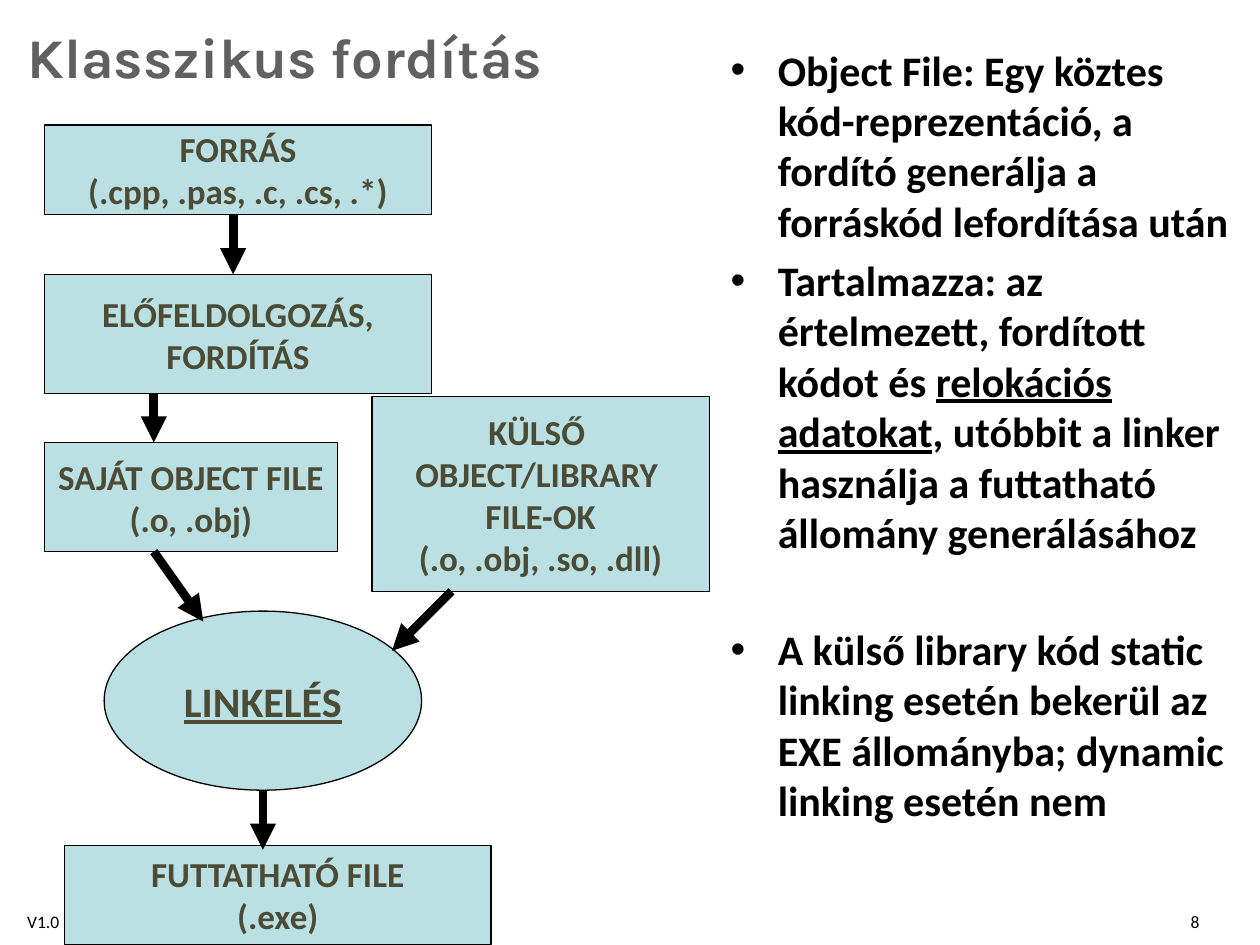
from pptx import Presentation
from pptx.dml.color import RGBColor
from pptx.enum.shapes import MSO_CONNECTOR, MSO_SHAPE
from pptx.enum.text import MSO_ANCHOR, PP_ALIGN
from pptx.oxml.ns import qn
from pptx.util import Cm, Pt
from lxml import etree

RECT, OVAL = MSO_SHAPE.RECTANGLE, MSO_SHAPE.OVAL
LINE = MSO_CONNECTOR.STRAIGHT
LEFT, MID, RIGHT = PP_ALIGN.LEFT, PP_ALIGN.CENTER, PP_ALIGN.RIGHT
TOP, CENTER = MSO_ANCHOR.TOP, MSO_ANCHOR.MIDDLE
COLORS = {"title": "606060", "text": "000000", "label": "4B4B36",
          "fill": "BBE0E3", "line": "000000"}


class Deck:
    """Holds the style and the current slide."""

    def __init__(self):
        self.show = Presentation()
        self.show.slide_width, self.show.slide_height = Cm(25.4), Cm(19.05)
        self.slide = self.show.slides.add_slide(self.show.slide_layouts[5])

    def color(self, name):
        return RGBColor.from_string(COLORS[name])

    def run(self, par, text, size, color, bold=True, under=False, face="Calibri"):
        run = par.add_run()
        run.text = text
        font = run.font
        font.name, font.size, font.bold = face, Pt(size), bold
        font.underline = under
        font.color.rgb = self.color(color)

    def title(self, text, place):
        shape = self.slide.shapes.title
        shape.left, shape.top, shape.width, shape.height = map(Cm, place)
        frame = shape.text_frame
        frame.vertical_anchor = CENTER
        par = frame.paragraphs[0]
        par.alignment = LEFT
        self.run(par, text, 32, "title", face="Karla")

    def frame(self, place):
        frame = self.slide.shapes.add_textbox(*map(Cm, place)).text_frame
        frame.word_wrap = True
        frame.vertical_anchor = TOP
        return frame

    def note(self, text, place, align):
        par = self.frame(place).paragraphs[0]
        par.alignment = align
        self.run(par, text, 10, "text", bold=False)

    def bullets(self, items, place):
        """Each item is a space before and a list of (text, underline)."""
        frame = self.frame(place)
        frame.margin_top = Cm(0.18)
        for i, (gap, parts) in enumerate(items):
            par = frame.add_paragraph() if i else frame.paragraphs[0]
            props = par._p.get_or_add_pPr()
            props.set("marL", str(Cm(0.95)))
            props.set("indent", str(Cm(-0.95)))
            etree.SubElement(props, qn("a:buFont")).set("typeface", "Arial")
            etree.SubElement(props, qn("a:buChar")).set("char", "•")
            par.space_before = Pt(gap)
            for text, under in parts:
                self.run(par, text, 24, "text", under=under)

    def block(self, kind, place, lines, size=20, under=False):
        shape = self.slide.shapes.add_shape(kind, *map(Cm, place))
        shape.shadow.inherit = False
        shape.fill.solid()
        shape.fill.fore_color.rgb = self.color("fill")
        shape.line.color.rgb = self.color("line")
        shape.line.width = Pt(0.75)
        frame = shape.text_frame
        frame.word_wrap = False
        frame.vertical_anchor = CENTER
        for i, text in enumerate(lines):
            par = frame.add_paragraph() if i else frame.paragraphs[0]
            par.alignment = MID
            for j, part in enumerate(text.split("\n")):
                if j:
                    par.add_line_break()
                self.run(par, part, size, "label", under=under)

    def arrow(self, ends):
        link = self.slide.shapes.add_connector(LINE, *map(Cm, ends))
        link.line.color.rgb = self.color("line")
        link.line.width = Pt(5)
        props = link._element.spPr
        etree.SubElement(props.find(qn("a:ln")), qn("a:tailEnd")).set("type", "triangle")
        etree.SubElement(props, qn("a:effectLst"))


BLOCKS = [
    (RECT, (0.9, 2.52, 7.8, 1.8), ["FORRÁS", "(.cpp, .pas, .c, .cs, .*)"]),
    (RECT, (0.9, 5.53, 7.8, 2.41), ["ELŐFELDOLGOZÁS,", "FORDÍTÁS"]),
    (RECT, (0.9, 8.92, 5.9, 2.2), ["SAJÁT OBJECT FILE", "(.o, .obj)"]),
    (RECT, (7.5, 8, 6.8, 3.93),
     ["KÜLSŐ \nOBJECT/LIBRARY \nFILE-OK", "(.o, .obj, .so, .dll)"]),
    (OVAL, (2.1, 12.32, 6.4, 3.61), ["LINKELÉS"], 24, True),
    (RECT, (1.3, 17.04, 8.6, 2), ["FUTTATHATÓ FILE", "(.exe)"]),
]
ARROWS = [
    (4.7, 4.32, 4.7, 5.53),
    (3.1, 7.93, 3.1, 8.92),
    (3.1, 11.12, 4.1, 12.53),
    (9.1, 11.92, 7.9, 13.12),
    (5.3, 15.93, 5.3, 17.13),
]
POINTS = [
    (0, [("Object File: Egy köztes kód-reprezentáció, a fordító generálja "
          "a forráskód lefordítása után", False)]),
    (5, [("Tartalmazza: az értelmezett, fordított kódot és ", False),
         ("relokációs adatokat", True),
         (", utóbbit a linker használja a futtatható állomány generálásához", False)]),
    (38, [("A külső library kód static linking esetén bekerül az EXE "
           "állományba; dynamic linking esetén nem", False)]),
]


def main():
    deck = Deck()
    deck.note("V1.0", (0.3, 18.24, 2, 0.5), LEFT)
    deck.title("Klasszikus fordítás", (0.3, 0.33, 24.8, 1.6))
    deck.bullets(POINTS, (14.48, 0.71, 10.62, 17.8))
    for block in BLOCKS:
        deck.block(*block)
    for ends in ARROWS:
        deck.arrow(ends)
    deck.note("8", (21.1, 18.24, 3.33, 0.5), RIGHT)
    deck.show.save("out.pptx")


if __name__ == "__main__":
    main()
